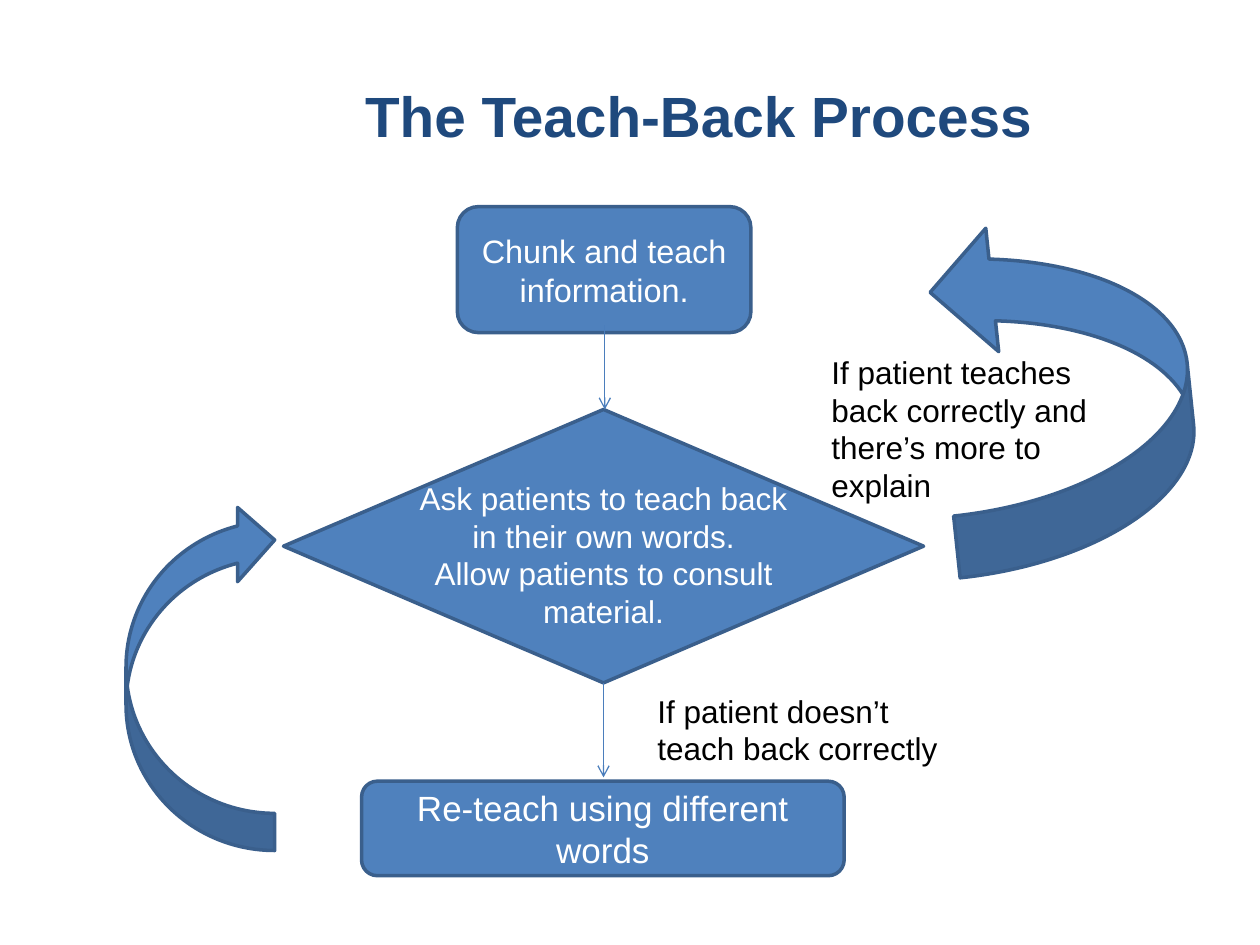
from pptx import Presentation
from pptx.dml.color import RGBColor
from pptx.enum.shapes import MSO_CONNECTOR, MSO_SHAPE
from pptx.enum.text import MSO_ANCHOR, PP_ALIGN
from pptx.oxml.ns import qn
from pptx.util import Inches, Pt
from lxml.etree import SubElement

FONT = "Arial"
WHITE = "FFFFFF"
BLACK = "000000"
NAVY = "1F497D"
FILL = "4F81BD"
OUTLINE = "3A5F8C"
ARROW = "4B7EBC"


def color(value):
    return RGBColor.from_string(value)


def write(shape, lines, size, ink, align=PP_ALIGN.CENTER, anchor=MSO_ANCHOR.MIDDLE, bold=False):
    frame = shape.text_frame
    frame.word_wrap = True
    frame.vertical_anchor = anchor
    for index, line in enumerate(lines):
        paragraph = frame.add_paragraph() if index else frame.paragraphs[0]
        paragraph.alignment = align
        span = paragraph.add_run()
        span.text = line
        span.font.name = FONT
        span.font.size = Pt(size)
        span.font.bold = bold
        span.font.color.rgb = color(ink)


def add_label(page, bounds, lines, size=18, ink=BLACK, align=PP_ALIGN.LEFT,
              anchor=MSO_ANCHOR.TOP, bold=False):
    box = page.shapes.add_textbox(*map(Inches, bounds))
    write(box, lines, size, ink, align, anchor, bold)


def add_block(page, kind, bounds, rotation=0):
    block = page.shapes.add_shape(kind, *map(Inches, bounds))
    block.rotation = rotation
    block.shadow.inherit = False
    block.fill.solid()
    block.fill.fore_color.rgb = color(FILL)
    block.line.color.rgb = color(OUTLINE)
    block.line.width = Pt(2)
    return block


def add_step(page, bounds, text, size):
    step = add_block(page, MSO_SHAPE.ROUNDED_RECTANGLE, bounds)
    write(step, [text], size, WHITE)


def add_down_arrow(page, x, top, bottom):
    arrow = page.shapes.add_connector(
        MSO_CONNECTOR.STRAIGHT, Inches(x), Inches(top), Inches(x), Inches(bottom))
    arrow.line.color.rgb = color(ARROW)
    arrow.line.width = Pt(0.75)
    SubElement(arrow.line._get_or_add_ln(), qn("a:tailEnd"), type="arrow")
    SubElement(arrow._element.spPr, qn("a:effectLst"))


def main():
    deck = Presentation()
    deck.slide_width = Inches(10)
    deck.slide_height = Inches(7.5)
    page = deck.slides.add_slide(deck.slide_layouts[6])

    add_label(page, (1.92, 0.57, 7.25, 0.68), ["The Teach-Back Process"], 32.4, NAVY,
              PP_ALIGN.CENTER, MSO_ANCHOR.MIDDLE, True)
    add_step(page, (3.63, 1.64, 2.33, 1), "Chunk and teach information.", 18.5)
    add_block(page, MSO_SHAPE.FLOWCHART_DECISION, (2.25, 3.25, 5.08, 2.17))
    add_step(page, (2.87, 6.2, 3.83, 0.75), "Re-teach using different words", 20)
    add_label(page, (3.08, 3.75, 3.42, 1.31), [
        "Ask patients to teach back",
        "in their own words.",
        "Allow patients to consult material.",
    ], ink=WHITE, align=PP_ALIGN.CENTER)

    add_down_arrow(page, 4.8, 2.58, 3.25)
    add_down_arrow(page, 4.79, 5.42, 6.17)
    add_label(page, (5.12, 5.44, 2.5, 0.71), ["If patient doesn’t teach back correctly"])
    add_label(page, (6.5, 2.75, 2.25, 1.31),
              ["If patient teaches back correctly and there’s more to explain"])

    add_block(page, MSO_SHAPE.CURVED_UP_ARROW, (7.07, 2.12, 2.77, 1.97), 264)
    add_block(page, MSO_SHAPE.CURVED_LEFT_ARROW, (1, 3.99, 1.18, 2.76), 180)

    deck.save("out.pptx")


if __name__ == "__main__":
    main()
